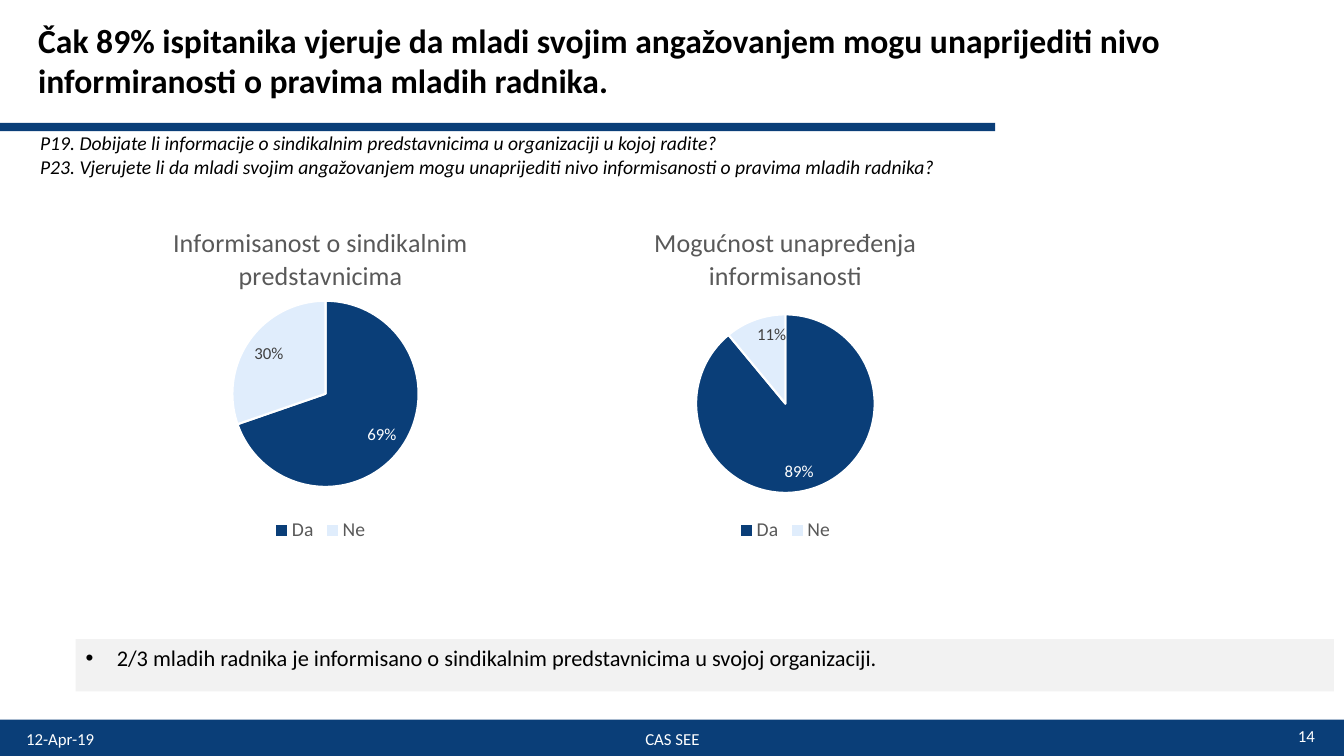
import pptx
import pptx.util
import pptx.chart.data
import pptx.dml.color
import pptx.enum.chart
import pptx.enum.shapes
import pptx.enum.text
import pptx.oxml
import pptx.oxml.ns

Inches = pptx.util.Inches
Pt = pptx.util.Pt
ALIGN = pptx.enum.text.PP_ALIGN
ANCHOR = pptx.enum.text.MSO_ANCHOR
PLACE = pptx.enum.chart.XL_LABEL_POSITION
COLORS = {
    "navy": "0A3E78", "pale": "E0EDFC", "white": "FFFFFF", "black": "000000",
    "band": "F2F2F2", "gray": "595959", "dark": "404040",
}


def tint(name):
    return pptx.dml.color.RGBColor.from_string(COLORS[name])


def style(font, size, color, **extra):
    form = {"name": "Calibri", "size": Pt(size), "bold": False, **extra}
    for key, value in form.items():
        setattr(font, key, value)
    font.color.rgb = tint(color)


def add_bar(slide, box, color):
    bar = slide.shapes.add_shape(
        pptx.enum.shapes.MSO_SHAPE.RECTANGLE, *map(Inches, box))
    bar.shadow.inherit = False
    bar.fill.solid()
    bar.fill.fore_color.rgb = tint(color)
    bar.line.fill.background()
    return bar


def add_text(slide, box, lines, size, color, align=ALIGN.LEFT,
             anchor=ANCHOR.MIDDLE, wrap=True, **extra):
    frame = slide.shapes.add_textbox(*map(Inches, box)).text_frame
    frame.word_wrap = wrap
    frame.vertical_anchor = anchor
    frame.text = "\n".join(lines)
    for para in frame.paragraphs:
        para.alignment = align
        style(para.font, size, color, **extra)


def add_note(slide, box, text):
    frame = add_bar(slide, box, "band").text_frame
    frame.word_wrap = True
    frame.vertical_anchor = ANCHOR.TOP
    frame.text = text
    para = frame.paragraphs[0]
    para.alignment = ALIGN.LEFT
    props = para._p.get_or_add_pPr()
    props.set("marL", str(Inches(0.31)))
    props.set("indent", str(Inches(-0.31)))
    space = pptx.oxml.ns.nsdecls("a")
    for tag in ('buFont {} typeface="Arial"', 'buChar {} char="•"'):
        props.append(pptx.oxml.parse_xml(f"<a:{tag.format(space)}/>"))
    style(para.font, 16, "black")


def set_plot(chart, plot):
    area = chart._chartSpace.chart.plotArea
    for old in area.findall(pptx.oxml.ns.qn("c:layout")):
        area.remove(old)
    pairs = [("layoutTarget", "inner"), ("xMode", "edge"), ("yMode", "edge"),
             *zip("xywh", plot)]
    parts = "".join(f'<c:{tag} val="{value}"/>' for tag, value in pairs)
    area.insert(0, pptx.oxml.parse_xml(
        f'<c:layout {pptx.oxml.ns.nsdecls("c")}>'
        f"<c:manualLayout>{parts}</c:manualLayout></c:layout>"))


def add_pie(slide, left, title, values, plot=None):
    data = pptx.chart.data.CategoryChartData(number_format="0%")
    data.categories = ["Da", "Ne"]
    data.add_series(title, values)
    box = map(Inches, (left, 2.06, 4.86, 3.36))
    chart = slide.shapes.add_chart(
        pptx.enum.chart.XL_CHART_TYPE.PIE, *box, data).chart
    style(chart.font, 10, "black")
    chart.has_title = True
    chart.chart_title.include_in_layout = False
    head = chart.chart_title.text_frame
    head.text = title
    style(head.paragraphs[0].runs[0].font, 18.6, "gray")
    chart.has_legend = True
    chart.legend.position = pptx.enum.chart.XL_LEGEND_POSITION.BOTTOM
    chart.legend.include_in_layout = False
    style(chart.legend.font, 14, "gray")
    pie = chart.plots[0]
    pie.vary_by_categories = True
    series = pie.series[0]
    labels = series.data_labels
    form = {"show_value": True, "show_percentage": False,
            "number_format": "0%", "number_format_is_linked": False,
            "position": PLACE.INSIDE_END}
    for key, value in form.items():
        setattr(labels, key, value)
    style(labels.font, 12, "dark")
    for index, color in enumerate(("navy", "pale")):
        slice_ = series.points[index].format
        slice_.fill.solid()
        slice_.fill.fore_color.rgb = tint(color)
        slice_.line.color.rgb = tint("white")
        slice_.line.width = Pt(1.5)
    label = series.points[0].data_label
    style(label.font, 12, "white")
    label.position = PLACE.INSIDE_END
    if plot:
        set_plot(chart, plot)


def main():
    deck = pptx.Presentation()
    deck.slide_width, deck.slide_height = Inches(13.33), Inches(7.5)
    slide = deck.slides.add_slide(deck.slide_layouts[6])
    add_bar(slide, (0, 7.14, 13.33, 0.36), "navy")
    add_bar(slide, (0, 1.22, 9.87, 0.08), "navy")
    add_text(slide, (0.28, -0.03, 11.42, 1.25), [
        "Čak 89% ispitanika vjeruje da mladi svojim angažovanjem mogu "
        "unaprijediti nivo informiranosti o pravima mladih radnika."],
        24, "black", bold=True)
    for box, text, align in (
            ((0.16, 7.13, 3.11, 0.4), "12-Apr-19", ALIGN.LEFT),
            ((4.56, 7.13, 4.22, 0.4), "CAS SEE", ALIGN.CENTER),
            ((10.03, 7.1, 3.11, 0.4), "14", ALIGN.RIGHT)):
        add_text(slide, box, [text], 12, "white", align)
    add_text(slide, (0.3, 1.25, 9.14, 0.57), [
        "P19. Dobijate li informacije o sindikalnim predstavnicima u "
        "organizaciji u kojoj radite?",
        "P23. Vjerujete li da mladi svojim angažovanjem mogu unaprijediti "
        "nivo informisanosti o pravima mladih radnika?"],
        14, "black", ALIGN.JUSTIFY, ANCHOR.TOP, False, italic=True)
    add_note(slide, (0.75, 6.34, 12.48, 0.52),
             "2/3 mladih radnika je informisano o sindikalnim "
             "predstavnicima u svojoj organizaciji.")
    add_pie(slide, 0.75, "Informisanost o sindikalnim predstavnicima",
            (0.69, 0.3), (0.32, 0.27, 0.38, 0.56))
    add_pie(slide, 5.36, "Mogućnost unapređenja informisanosti", (0.89, 0.11))
    deck.save("out.pptx")


if __name__ == "__main__":
    main()
